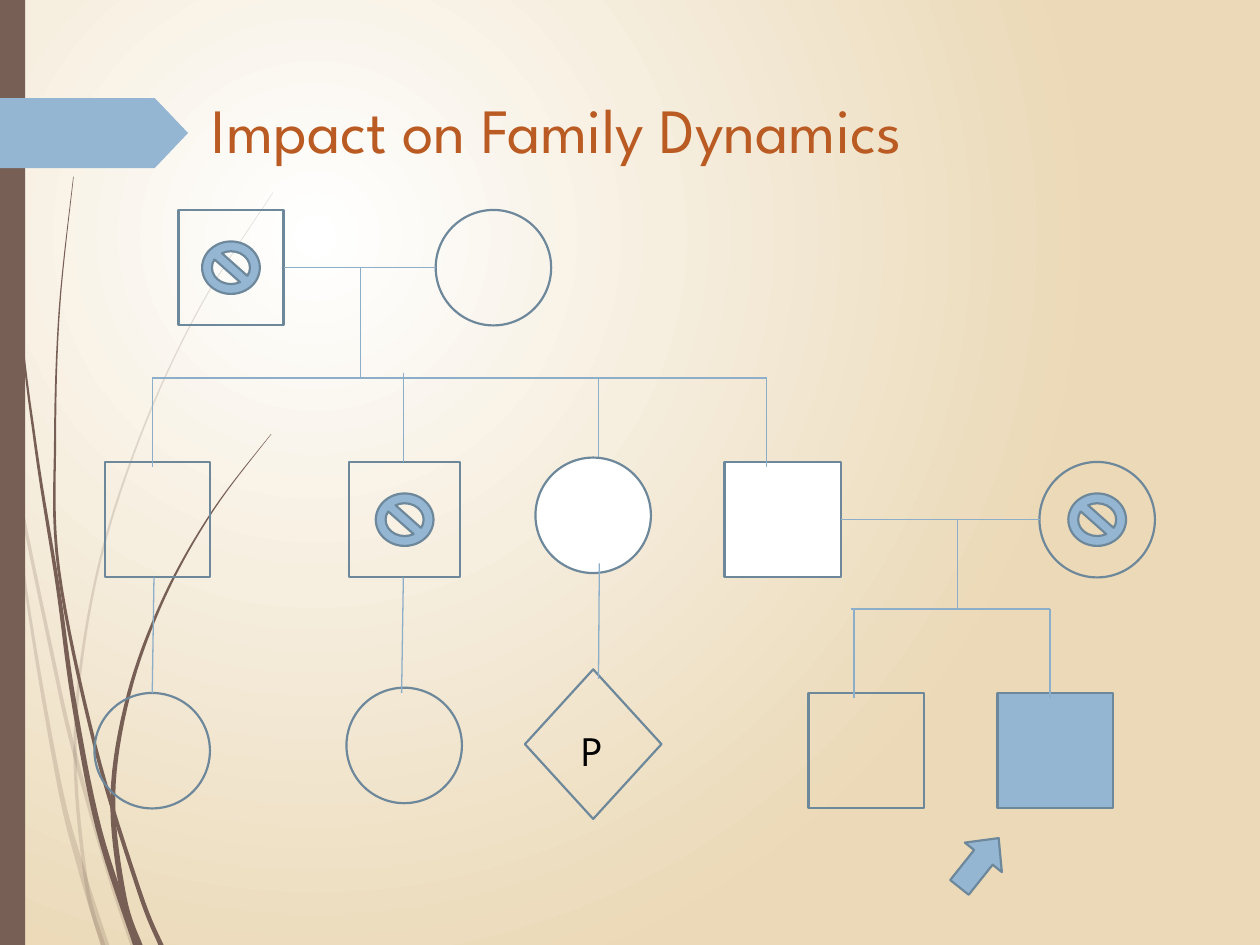
from dataclasses import dataclass
from typing import Optional

from lxml.etree import SubElement
from pptx import Presentation
from pptx.dml.color import RGBColor
from pptx.enum.shapes import MSO_CONNECTOR, MSO_SHAPE
from pptx.oxml.ns import qn
from pptx.util import Pt

WHITE = RGBColor(0xFF, 0xFF, 0xFF)
BLACK = RGBColor(0x00, 0x00, 0x00)
SAND = RGBColor(0xEB, 0xD9, 0xB7)
BROWN = RGBColor(0x77, 0x5F, 0x55)
BLUE = RGBColor(0x94, 0xB6, 0xD2)
OUTLINE = RGBColor(0x6D, 0x87, 0x9B)
KINSHIP = RGBColor(0x8D, 0xAE, 0xC9)
RUST = RGBColor(0xB9, 0x5B, 0x22)
FONT = "League Spartan"

SLIDE_WIDTH, SLIDE_HEIGHT = 720, 540
SIZE = 66  # usual side of a family symbol
GRANDPARENTS, PARENTS, CHILDREN = 120, 264, 396  # tops of the generations
SIBLING_BAR, GRANDCHILD_BAR = 216, 348  # heights of the horizontal bars
DROP = 51  # from a bar down to a symbol
MALE, FEMALE, PREGNANCY = MSO_SHAPE.RECTANGLE, MSO_SHAPE.OVAL, MSO_SHAPE.FLOWCHART_DECISION


@dataclass(frozen=True)
class Stem:
    """Grass stem that widens evenly from its tip to its root."""
    knots: tuple
    tip_width: float = 0.3
    root_width: float = 4
    alpha: int = 100


STEMS = [
    Stem(((0, 209), (8, 268), (30, 375), (42, 428), (62, 498), (76, 540)), 1.5, 3, alpha=20),
    Stem(((6, 252), (15, 338), (33.5, 446), (46, 495), (60, 540)), root_width=5, alpha=20),
    Stem(((156, 110), (114, 176), (79.5, 251), (54.5, 332), (43, 420), (49, 502), (59, 540)),
         root_width=2.5, alpha=20),
    Stem(((2, 0), (10.5, 168), (20.5, 256), (33, 335), (42, 400), (56.5, 474), (78, 540))),
    Stem(((42, 101), (34, 176), (31.5, 251), (33.5, 325), (54, 425), (79.5, 509), (92, 540)),
         root_width=3),
    Stem(((155, 248), (121.5, 292), (93.5, 342), (73.5, 397), (64.5, 455), (70.5, 512), (79.5, 540))),
]


@dataclass(frozen=True)
class Person:
    symbol: MSO_SHAPE
    left: float
    top: float
    width: float = SIZE
    height: float = SIZE
    fill: Optional[RGBColor] = None
    deceased: bool = False

    @property
    def right(self) -> float:
        return self.left + self.width

    @property
    def middle(self) -> float:
        return self.top + self.height / 2


GRANDFATHER = Person(MALE, 102, GRANDPARENTS, 60, deceased=True)
GRANDMOTHER = Person(FEMALE, 249, GRANDPARENTS)
FIRST_SON = Person(MALE, 60, PARENTS, 60)
SECOND_SON = Person(MALE, 199.5, PARENTS, 63.5, deceased=True)
DAUGHTER = Person(FEMALE, 306, 261.5, fill=WHITE)
FATHER = Person(MALE, 414, PARENTS, 66.5, fill=WHITE)
MOTHER = Person(FEMALE, 594, PARENTS, deceased=True)
FIRST_COUSIN = Person(FEMALE, 54, CHILDREN)
SECOND_COUSIN = Person(FEMALE, 198, 393)
UNBORN = Person(PREGNANCY, 300, 382.5, 78, 85.5)
BROTHER = Person(MALE, 462, CHILDREN)
PATIENT = Person(MALE, 570, CHILDREN, fill=BLUE)
FAMILY = [MOTHER, FATHER, PATIENT, GRANDFATHER, FIRST_SON, SECOND_SON,
          FIRST_COUSIN, SECOND_COUSIN, GRANDMOTHER, BROTHER, UNBORN]


def paint_background(slide) -> None:
    """Radial glow, white at the upper left and sand outwards."""
    fill = slide.background.fill
    fill.gradient()
    for stop, color, position in zip(fill.gradient_stops, (WHITE, SAND), (0, 1)):
        stop.color.rgb, stop.position = color, position
    gradient = next(slide._element.iter(qn("a:gradFill")))
    gradient.remove(gradient.find(qn("a:lin")))
    glow = SubElement(gradient, qn("a:path"), {"path": "circle"})
    SubElement(glow, qn("a:fillToRect"), {"l": "50000", "t": "50000", "r": "100000", "b": "100000"})


def spline(knots: tuple, steps: int = 8) -> list:
    """Points of a Catmull-Rom curve through all the knots."""
    padded = (knots[0], *knots, knots[-1])
    points = []
    for before, start, end, after in zip(padded, padded[1:], padded[2:], padded[3:]):
        for step in range(steps):
            t = step / steps
            points.append(tuple(
                b + 0.5 * t * (c - a + t * (2 * a - 5 * b + 4 * c - d + t * (3 * (b - c) + d - a)))
                for a, b, c, d in zip(before, start, end, after)))
    return points + [knots[-1]]


def draw_outline(shapes, points: list, color: RGBColor, alpha: int = 100) -> None:
    corners = [(Pt(x), Pt(y)) for x, y in points]
    builder = shapes.build_freeform(*corners[0], scale=1.0)
    builder.add_line_segments(corners[1:], close=True)
    shape = builder.convert_to_shape()
    shape.shadow.inherit = False
    shape.fill.solid()
    shape.fill.fore_color.rgb = color
    shape.line.fill.background()
    if alpha < 100:
        SubElement(next(shape._element.iter(qn("a:srgbClr"))), qn("a:alpha"), {"val": str(alpha * 1000)})


def draw_stem(shapes, stem: Stem) -> None:
    center = spline(stem.knots)
    growth = (stem.root_width - stem.tip_width) / (len(center) - 1)
    left_edge, right_edge = [], []
    for index, (x, y) in enumerate(center):
        half = (stem.tip_width + growth * index) / 2
        left_edge.append((x - half, y))
        right_edge.append((x + half, y))
    draw_outline(shapes, left_edge + right_edge[::-1], BROWN, stem.alpha)


def draw_banner(shapes, top=56, bottom=96, shoulder=88.5, tip=107.5) -> None:
    draw_outline(shapes, [(0, top), (shoulder, top), (tip, (top + bottom) / 2),
                          (shoulder, bottom), (0, bottom)], BLUE)


def draw_symbol(shapes, symbol, left, top, width, height, fill=None, line: Optional[RGBColor] = OUTLINE):
    shape = shapes.add_shape(symbol, Pt(left), Pt(top), Pt(width), Pt(height))
    shape.shadow.inherit = False
    if fill is None:
        shape.fill.background()
    else:
        shape.fill.solid()
        shape.fill.fore_color.rgb = fill
    if line is None:
        shape.line.fill.background()
    else:
        shape.line.color.rgb = line
        shape.line.width = Pt(1.25)
    return shape


def draw_person(shapes, person: Person) -> None:
    draw_symbol(shapes, person.symbol, person.left, person.top, person.width, person.height, person.fill)


def mark_deceased(shapes, person: Person, width=33, height=30) -> None:
    draw_symbol(shapes, MSO_SHAPE.NO_SYMBOL, person.left + (person.width - width) / 2,
                person.middle - height / 2, width, height, BLUE)


def draw_tie(shapes, x1: float, y1: float, x2: float, y2: float) -> None:
    tie = shapes.add_connector(MSO_CONNECTOR.STRAIGHT, Pt(x1), Pt(y1), Pt(x2), Pt(y2))
    tie.line.color.rgb = KINSHIP
    tie.line.width = Pt(0.75)
    SubElement(tie._element.spPr, qn("a:effectLst"))


def draw_descent(shapes, husband: Person, wife: Person, stem_x: float, bar: float,
                 bar_ends: tuple, drops: list) -> None:
    """Couple line, stem down to the siblings' bar, and a drop to each sibling."""
    draw_tie(shapes, husband.right, husband.middle, wife.left, wife.middle)
    draw_tie(shapes, stem_x, husband.middle, stem_x, bar)
    draw_tie(shapes, bar_ends[0], bar, bar_ends[1], bar)
    for x, start in drops:
        draw_tie(shapes, x, start, x, start + DROP)


def write(shapes, words: str, left, top, width, height, size, color: RGBColor) -> None:
    frame = shapes.add_textbox(Pt(left), Pt(top), Pt(width), Pt(height)).text_frame
    frame.word_wrap = True
    frame.text = words
    font = frame.paragraphs[0].runs[0].font
    font.name, font.size, font.color.rgb = FONT, Pt(size), color


def main() -> None:
    deck = Presentation()
    deck.slide_width, deck.slide_height = Pt(SLIDE_WIDTH), Pt(SLIDE_HEIGHT)
    slide = deck.slides.add_slide(deck.slide_layouts[6])
    shapes = slide.shapes
    paint_background(slide)
    for stem in STEMS:
        draw_stem(shapes, stem)
    draw_symbol(shapes, MSO_SHAPE.RECTANGLE, 0, 0, 14.4, SLIDE_HEIGHT, BROWN, line=None)
    draw_banner(shapes)
    write(shapes, "Impact on Family Dynamics", 114, 48, 519, 101, 36, RUST)

    for person in FAMILY:
        draw_person(shapes, person)
    draw_descent(shapes, GRANDFATHER, GRANDMOTHER, 206, SIBLING_BAR, (87, 438.5),
                 [(87, SIBLING_BAR), (230.5, SIBLING_BAR - 3), (342, SIBLING_BAR), (438, SIBLING_BAR)])
    draw_descent(shapes, FATHER, MOTHER, 547, GRANDCHILD_BAR, (486.5, 600),
                 [(488, GRANDCHILD_BAR), (600, GRANDCHILD_BAR)])
    draw_person(shapes, DAUGHTER)
    for parent_x, child_x, top in [(88, 87, 330), (230.5, 229.5, 330), (342.5, 342, 322)]:
        draw_tie(shapes, parent_x, top, child_x, top + SIZE)

    write(shapes, "P", 325, 410.5, 36, 36, 24, BLACK)
    patient_arrow = draw_symbol(shapes, MSO_SHAPE.DOWN_ARROW, 546, 475, 27, 36, BLUE)
    patient_arrow.rotation = 218.5
    patient_arrow.adjustments[1] = 0.52
    for person in FAMILY:
        if person.deceased:
            mark_deceased(shapes, person)
    deck.save("out.pptx")


if __name__ == "__main__":
    main()
